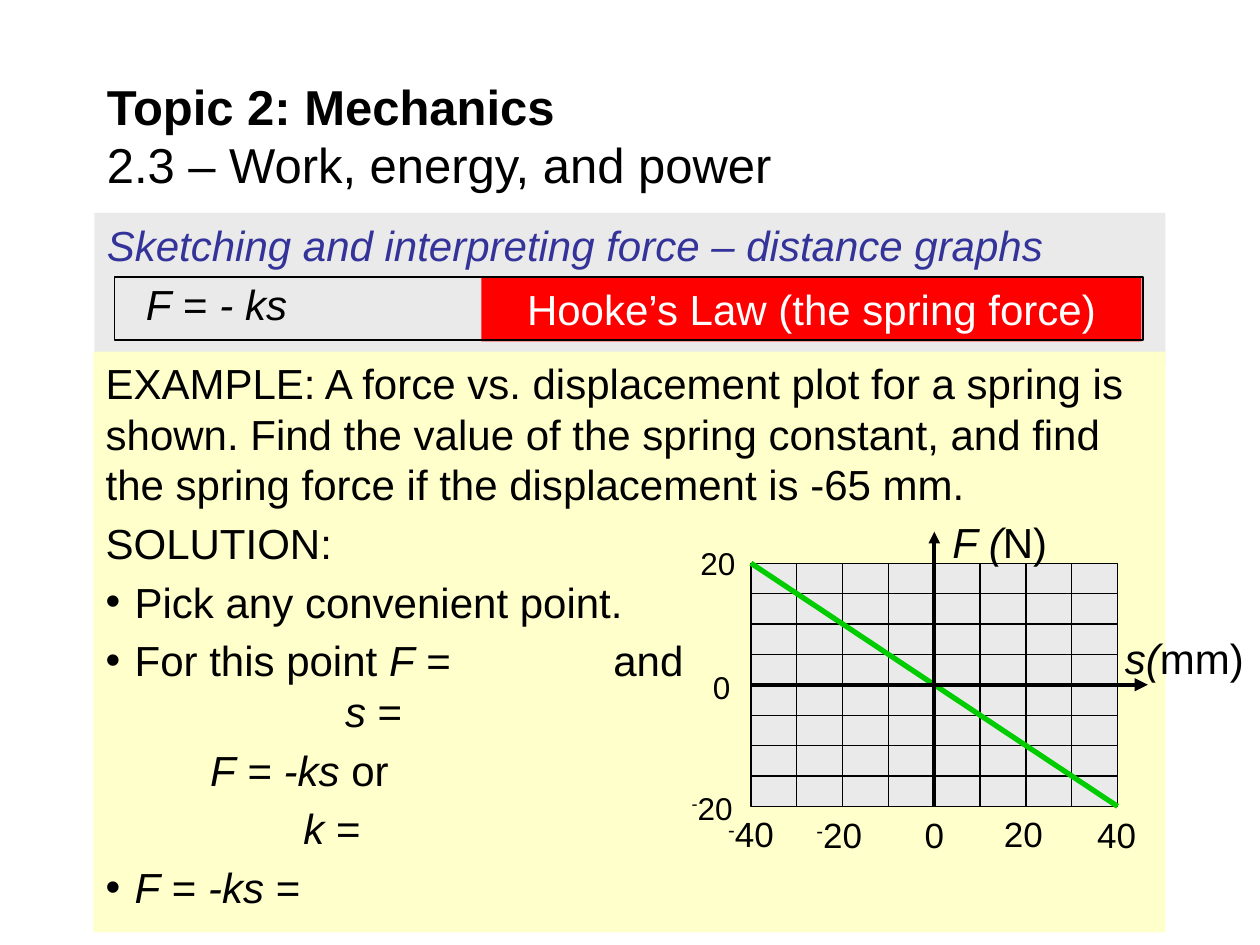
from lxml import etree
from pptx import Presentation
from pptx.dml.color import RGBColor
from pptx.enum.shapes import MSO_CONNECTOR, MSO_SHAPE
from pptx.enum.text import MSO_ANCHOR, PP_ALIGN
from pptx.oxml.ns import qn
from pptx.util import Inches, Pt

RECTANGLE = MSO_SHAPE.RECTANGLE
STRAIGHT = MSO_CONNECTOR.STRAIGHT
TOP, MIDDLE = MSO_ANCHOR.TOP, MSO_ANCHOR.MIDDLE
LEFT, CENTER = PP_ALIGN.LEFT, PP_ALIGN.CENTER

FONT = "Arial"
BLACK, WHITE, GRAY = "000000", "FFFFFF", "EAEAEA"
CREAM, RED, GREEN, BLUE = "FFFFCC", "FF0000", "00CC00", "333399"
ITALIC, BOLD, RAISED = {"italic": True}, {"bold": True}, {"baseline": 30000}

# Content: a paragraph is (runs, options), a run is (text, format)
TITLE = [([("Topic 2: Mechanics\v", BOLD),
           ("2.3 – Work, energy, and power", {})], {})]
HEADING = [([("Sketching and interpreting force – distance graphs", ITALIC)], {})]
FORMULA = [([("F", ITALIC), (" = ", {}), ("- ks", ITALIC)], {"line_spacing": 0.9})]
LAW = [([("Hooke’s Law (the spring force)", {})], {"alignment": CENTER})]
GAP = Pt(4.8)
BULLET = {"space_before": GAP, "bullet": "•", "indent": 0.23}
EXAMPLE = [
    ([("EXAMPLE: A force vs. displacement plot for a spring is shown. "
       "Find the value of the spring constant, and find the spring force "
       "if the displacement is -65 mm.", {})], {}),
    ([("SOLUTION:", {})], {"space_before": GAP}),
    ([("Pick any convenient point.", {})], BULLET),
    ([("For this point ", {}), ("F", ITALIC), (" =\tand", {})],
     {**BULLET, "tab": 4.03}),
    ([("s", ITALIC), (" =", {})], {"indent": 1.9}),
    ([("F", ITALIC), (" = ", {}), ("-ks ", ITALIC), ("or", {})],
     {"space_before": GAP, "indent": 0.83}),
    ([("k ", ITALIC), ("=", {})], {"space_before": GAP, "indent": 1.57}),
    ([("F", ITALIC), (" = ", {}), ("-ks ", ITALIC), ("=", {})], BULLET),
]

# Graph: eight by eight cells; labels are (sign, digits, left, top)
CELLS = 8
GRID_LEFT, GRID_TOP, GRID_WIDTH, GRID_HEIGHT = 5.96, 4.47, 2.91, 1.93
FORCE_LABELS = [("", "20", 5.46, 4.27), ("", "0", 5.56, 5.25), ("-", "20", 5.39, 6.21)]
DISTANCE_LABELS = [("-", "40", 5.68, 6.4), ("-", "20", 6.38, 6.41),
                   ("", "0", 7.24, 6.41), ("", "20", 7.87, 6.4), ("", "40", 8.61, 6.41)]
AXIS_NAMES = [("F (", "N)", 7.46, 4.05, 0.96), ("s(", "mm)", 8.83, 4.97, 1.16)]


def color(value):
    return RGBColor.from_string(value)


def write(shape, paragraphs, size=24, text_color=BLACK, anchor=TOP, wrap=True):
    frame = shape.text_frame
    frame.word_wrap = wrap
    frame.vertical_anchor = anchor
    for index, (runs, options) in enumerate(paragraphs):
        paragraph = frame.paragraphs[0] if index == 0 else frame.add_paragraph()
        paragraph.alignment = LEFT
        for name in ("alignment", "space_before", "line_spacing"):
            if name in options:
                setattr(paragraph, name, options[name])
        properties = paragraph._p.get_or_add_pPr()
        if "indent" in options:
            properties.set("marL", str(Inches(options["indent"])))
        if "bullet" in options:
            properties.set("indent", str(-Inches(options["indent"])))
            etree.SubElement(properties, qn("a:buFont"), typeface=FONT)
            etree.SubElement(properties, qn("a:buChar"), char=options["bullet"])
        if "tab" in options:
            tabs = etree.SubElement(properties, qn("a:tabLst"))
            etree.SubElement(tabs, qn("a:tab"), pos=str(Inches(options["tab"])), algn="l")
        for text, changes in runs:
            if "\v" in text:
                text, line_break = text.rstrip("\v"), True
            else:
                line_break = False
            run = paragraph.add_run()
            run.text = text
            values = {"name": FONT, "size": Pt(size), "bold": False, "italic": False}
            values.update(changes)
            baseline = values.pop("baseline", None)
            for name, value in values.items():
                setattr(run.font, name, value)
            run.font.color.rgb = color(text_color)
            if baseline:
                run._r.get_or_add_rPr().set("baseline", str(baseline))
            if line_break:
                paragraph.add_line_break()


def add_box(slide, left, top, width, height, fill=None, line=None, line_width=1):
    shape = slide.shapes.add_shape(
        RECTANGLE, Inches(left), Inches(top), Inches(width), Inches(height))
    shape.shadow.inherit = False
    if fill:
        shape.fill.solid()
        shape.fill.fore_color.rgb = color(fill)
    else:
        shape.fill.background()
    if line:
        shape.line.color.rgb = color(line)
        shape.line.width = Pt(line_width)
    else:
        shape.line.fill.background()
    return shape


def add_text(slide, left, top, width, height, paragraphs, **style):
    box = slide.shapes.add_textbox(
        Inches(left), Inches(top), Inches(width), Inches(height))
    write(box, paragraphs, **style)


def add_line(slide, start, end, line_color, width, arrow=False):
    points = [Inches(value) for value in (*start, *end)]
    connector = slide.shapes.add_connector(STRAIGHT, *points)
    connector.line.color.rgb = color(line_color)
    connector.line.width = Pt(width)
    if arrow:
        etree.SubElement(connector.line._get_or_add_ln(), qn("a:tailEnd"), type="triangle")
    etree.SubElement(connector._element.spPr, qn("a:effectLst"))


def add_graph(slide):
    right, bottom = GRID_LEFT + GRID_WIDTH, GRID_TOP + GRID_HEIGHT
    center_x, center_y = GRID_LEFT + GRID_WIDTH / 2, GRID_TOP + GRID_HEIGHT / 2
    cell_width, cell_height = GRID_WIDTH / CELLS, GRID_HEIGHT / CELLS
    for row in range(CELLS):
        for column in range(CELLS):
            add_box(slide, GRID_LEFT + column * cell_width, GRID_TOP + row * cell_height,
                    cell_width, cell_height, GRAY, BLACK, 0.75)

    # Plotted force and the two axes
    add_line(slide, (GRID_LEFT, GRID_TOP), (right, bottom), GREEN, 3)
    add_line(slide, (center_x, bottom), (center_x, 4.22), BLACK, 2.25, arrow=True)
    add_line(slide, (GRID_LEFT, center_y), (9.11, center_y), BLACK, 2.5, arrow=True)

    # Axis names and scale labels
    for symbol, unit, left, top, width in AXIS_NAMES:
        add_text(slide, left, top, width, 0.51,
                 [([(symbol, ITALIC), (unit, {})], {})], wrap=False)
    for labels, size in ((FORCE_LABELS, 18), (DISTANCE_LABELS, 20)):
        for sign, digits, left, top in labels:
            runs = [(sign, RAISED)] if sign else []
            width = 0.2 + (len(digits) * 0.56 + len(sign) * 0.22) * size / 72
            add_text(slide, left, top, width, 0.1 + size / 60,
                     [(runs + [(digits, {})], {})], size=size, wrap=False)


def main():
    presentation = Presentation()
    presentation.slide_width, presentation.slide_height = Inches(10), Inches(7.5)
    slide = presentation.slides.add_slide(presentation.slide_layouts[6])

    # Heading band, title and worked example
    write(add_box(slide, 0.75, 1.69, 8.5, 1.21, GRAY), HEADING, text_color=BLUE)
    add_text(slide, 0.75, 0.58, 8.5, 0.98, TITLE, size=28, anchor=MIDDLE)
    write(add_box(slide, 0.74, 2.79, 8.51, 4.61, CREAM), EXAMPLE)

    add_graph(slide)

    # Formula bar
    add_text(slide, 1.06, 2.21, 1.49, 0.35, FORMULA)
    write(add_box(slide, 3.82, 2.2, 5.24, 0.51, RED), LAW, text_color=WHITE)
    add_box(slide, 0.91, 2.2, 8.16, 0.5, line=BLACK)

    presentation.save("out.pptx")


if __name__ == "__main__":
    main()
